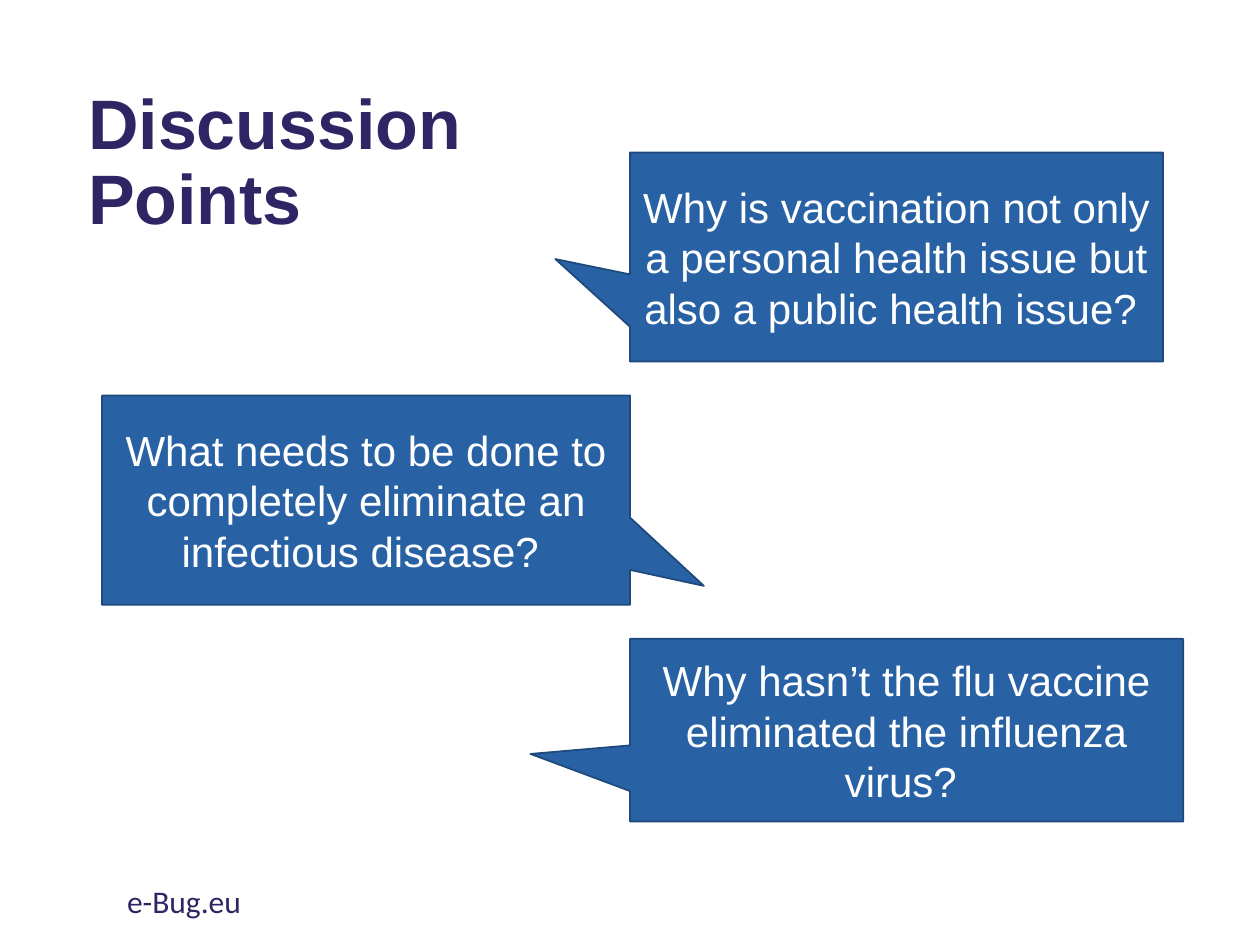
import pptx
import pptx.dml.color
import pptx.enum.shapes
import pptx.enum.text
import pptx.util
from dataclasses import dataclass

Inches = pptx.util.Inches
ALIGN = pptx.enum.text.PP_ALIGN
ANCHOR = pptx.enum.text.MSO_ANCHOR


@dataclass(frozen=True)
class Theme:
    """Colours, fonts and type sizes of the slide."""
    ink: str = "302564"
    bubble: str = "2862A5"
    outline: str = "1E497A"
    light: str = "FFFFFF"
    heading_font: str = "Arial"
    footer_font: str = "Calibri"
    title_size: int = 40
    question_size: int = 24
    footer_size: int = 18


def rgb(value):
    """Turn a hex string into a colour."""
    return pptx.dml.color.RGBColor.from_string(value)


def write(frame, text, *, font, size, color, bold=False,
          align=ALIGN.LEFT, anchor=ANCHOR.TOP, line_spacing=None):
    """Put one formatted paragraph into a text frame."""
    frame.word_wrap = True
    frame.auto_size = pptx.enum.text.MSO_AUTO_SIZE.NONE
    frame.vertical_anchor = anchor
    paragraph = frame.paragraphs[0]
    paragraph.alignment = align
    paragraph.line_spacing = line_spacing
    run = paragraph.add_run()
    run.text = text
    run.font.name = font
    run.font.size = pptx.util.Pt(size)
    run.font.bold = bold
    run.font.color.rgb = rgb(color)


class SlideBuilder:
    """Holds the theme and the current slide."""

    def __init__(self, slide, theme):
        """Keep the slide and its theme."""
        self.slide = slide
        self.theme = theme

    def title(self, text, left, top, width, height):
        """Place and fill the title placeholder."""
        heading = self.slide.shapes.title
        heading.left, heading.top = Inches(left), Inches(top)
        heading.width, heading.height = Inches(width), Inches(height)
        write(heading.text_frame, text, font=self.theme.heading_font,
              size=self.theme.title_size, color=self.theme.ink, bold=True,
              anchor=ANCHOR.MIDDLE, line_spacing=0.9)

    def question(self, text, box, pointer):
        """Add a speech bubble whose tip lies at the pointer offsets."""
        bubble = self.slide.shapes.add_shape(
            pptx.enum.shapes.MSO_SHAPE.RECTANGULAR_CALLOUT, *map(Inches, box))
        for index, offset in enumerate(pointer):
            bubble.adjustments[index] = offset
        bubble.shadow.inherit = False
        bubble.fill.solid()
        bubble.fill.fore_color.rgb = rgb(self.theme.bubble)
        bubble.line.color.rgb = rgb(self.theme.outline)
        bubble.line.width = pptx.util.Pt(1)
        write(bubble.text_frame, text, font=self.theme.heading_font,
              size=self.theme.question_size, color=self.theme.light,
              align=ALIGN.CENTER, anchor=ANCHOR.MIDDLE)

    def footer(self, text, left, top, width, height):
        """Add the site address at the foot of the slide."""
        address = self.slide.shapes.add_textbox(
            *map(Inches, (left, top, width, height)))
        write(address.text_frame, text, font=self.theme.footer_font,
              size=self.theme.footer_size, color=self.theme.ink)


def main():
    """Build the discussion slide and save it."""
    deck = pptx.Presentation()
    deck.slide_width, deck.slide_height = Inches(10), Inches(7.5)
    builder = SlideBuilder(
        deck.slides.add_slide(deck.slide_layouts.get_by_name("Title Only")), Theme())
    builder.title("Discussion Points", 0.6, 0.58, 3.6, 1.45)
    questions = [
        ("Why is vaccination not only a personal health issue but also a public health issue? ",
         (5, 1.21, 4.23, 1.66), (-0.64, 0.01)),
        ("What needs to be done to completely eliminate an infectious disease? ",
         (0.81, 3.14, 4.19, 1.66), (0.64, 0.41)),
        ("Why hasn’t the flu vaccine eliminated the influenza virus? ",
         (5, 5.07, 4.39, 1.45), (-0.68, 0.13)),
    ]
    for text, box, pointer in questions:
        builder.question(text, box, pointer)
    builder.footer("e-Bug.eu", 0.91, 6.95, 3.38, 0.4)
    deck.save("out.pptx")


if __name__ == "__main__":
    main()
